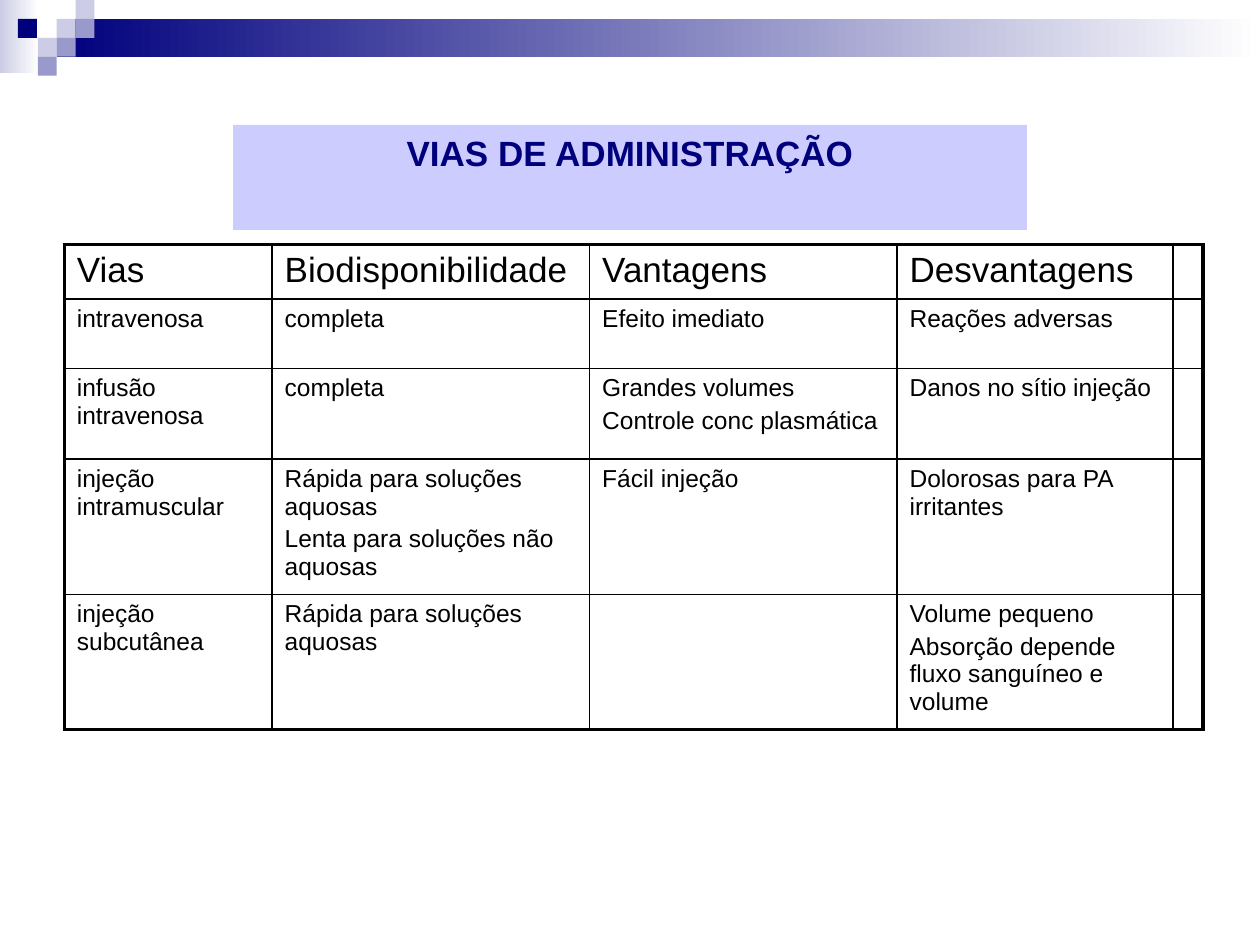
from dataclasses import dataclass

from lxml.etree import SubElement
from pptx import Presentation
from pptx.dml.color import RGBColor
from pptx.enum.shapes import MSO_SHAPE
from pptx.enum.text import MSO_ANCHOR, MSO_AUTO_SIZE, PP_ALIGN
from pptx.oxml.ns import qn
from pptx.util import Inches, Pt


@dataclass(frozen=True)
class Theme:
    font: str = "Arial"
    navy: str = "00007D"
    mid: str = "9999CC"
    light: str = "CCCCE6"
    band: str = "CCCCFF"
    white: str = "FFFFFF"
    black: str = "000000"
    head: int = 20
    body: int = 14
    thin: float = 1
    thick: float = 2.25


THEME = Theme()
UNIT = 0.15

# Corner squares: column, row, colour, on a grid of UNIT
TILES = [
    (3, 1, THEME.light),
    (4, 0, THEME.light),
    (4, 1, THEME.mid),
    (2, 2, THEME.light),
    (0.95, 1, THEME.navy),
    (3, 2, THEME.mid),
    (2, 3, THEME.mid),
]

COLS = [1.65, 2.52, 2.44, 2.19, 0.23]
ROWS = [0.43, 0.55, 0.72, 1.07, 1.07]
CELLS = [
    ["Vias", "Biodisponibilidade", "Vantagens", "Desvantagens", ""],
    ["intravenosa", "completa", "Efeito imediato", "Reações adversas", ""],
    ["infusão intravenosa", "completa",
     "Grandes volumes\nControle conc plasmática", "Danos no sítio injeção", ""],
    ["injeção intramuscular",
     "Rápida para soluções aquosas\nLenta para soluções não aquosas",
     "Fácil injeção", "Dolorosas para PA irritantes", ""],
    ["injeção subcutânea", "Rápida para soluções aquosas", "",
     "Volume pequeno\nAbsorção depende fluxo sanguíneo e volume", ""],
]


def write(frame, text, size, color=THEME.black, bold=False,
          align=PP_ALIGN.LEFT, gap=0.2):
    """Fill a text frame, one paragraph per line; gap is a share of size."""
    frame.text = text
    for para in frame.paragraphs:
        para.alignment = align
        para.space_before = Pt(size * gap)
        font = para.font
        font.name, font.size, font.bold = THEME.font, Pt(size), bold
        font.color.rgb = RGBColor.from_string(color)


def add_rect(slide, left, top, width, height, color, fade=None):
    """Add a plain rectangle, or one that fades from left to right."""
    rect = slide.shapes.add_shape(
        MSO_SHAPE.RECTANGLE, Inches(left), Inches(top),
        Inches(width), Inches(height))
    rect.shadow.inherit = False
    rect.line.fill.background()
    if fade:
        rect.fill.gradient()
        rect.fill.gradient_angle = 0
        for stop, shade in zip(rect.fill.gradient_stops, (color, fade)):
            stop.color.rgb = RGBColor.from_string(shade)
    else:
        rect.fill.solid()
        rect.fill.fore_color.rgb = RGBColor.from_string(color)


def set_edge(cell, side, width):
    """Draw one border of a cell; side is L, R, T or B."""
    props = cell._tc.get_or_add_tcPr()
    line = SubElement(props, qn(f"a:ln{side}"), w=str(Pt(width)))
    fill = SubElement(line, qn("a:solidFill"))
    SubElement(fill, qn("a:srgbClr"), val=THEME.black)


def add_header(slide):
    add_rect(slide, 0, 0, 0.31, 0.58, THEME.light, fade=THEME.white)
    add_rect(slide, 3 * UNIT, UNIT, 9.55, 2 * UNIT, THEME.navy, fade=THEME.white)
    for col, row, color in TILES:
        add_rect(slide, col * UNIT, row * UNIT, UNIT, UNIT, color)


def add_title(slide, text):
    title = slide.shapes.title
    title.left, title.top = Inches(1.85), Inches(0.99)
    title.width, title.height = Inches(6.3), Inches(0.43)
    title.fill.solid()
    title.fill.fore_color.rgb = RGBColor.from_string(THEME.band)
    frame = title.text_frame
    frame.word_wrap = True
    frame.auto_size = MSO_AUTO_SIZE.SHAPE_TO_FIT_TEXT
    frame.vertical_anchor = MSO_ANCHOR.TOP
    write(frame, text, THEME.head, THEME.navy, bold=True,
          align=PP_ALIGN.CENTER, gap=0.5)


def add_grid(slide):
    table = slide.shapes.add_table(
        len(ROWS), len(COLS), Inches(0.51), Inches(1.94),
        Inches(sum(COLS)), Inches(sum(ROWS))).table
    table.first_row = table.horz_banding = False
    for col, width in zip(table.columns, COLS):
        col.width = Inches(width)
    for row, height in zip(table.rows, ROWS):
        row.height = Inches(height)

    # Thick frame outside, thin rules inside
    for r, line in enumerate(CELLS):
        for c, text in enumerate(line):
            cell = table.cell(r, c)
            outer = {"L": c == 0, "R": c == len(COLS) - 1,
                     "T": r == 0, "B": r == len(ROWS) - 1}
            for side, edge in outer.items():
                set_edge(cell, side, THEME.thick if edge else THEME.thin)
            cell.fill.background()
            write(cell.text_frame, text, THEME.body if r else THEME.head)


def main():
    deck = Presentation()
    deck.slide_width, deck.slide_height = Inches(10), Inches(7.5)
    slide = deck.slides.add_slide(deck.slide_layouts[5])
    add_header(slide)
    add_title(slide, "VIAS DE ADMINISTRAÇÃO")
    add_grid(slide)
    deck.save("out.pptx")


if __name__ == "__main__":
    main()
